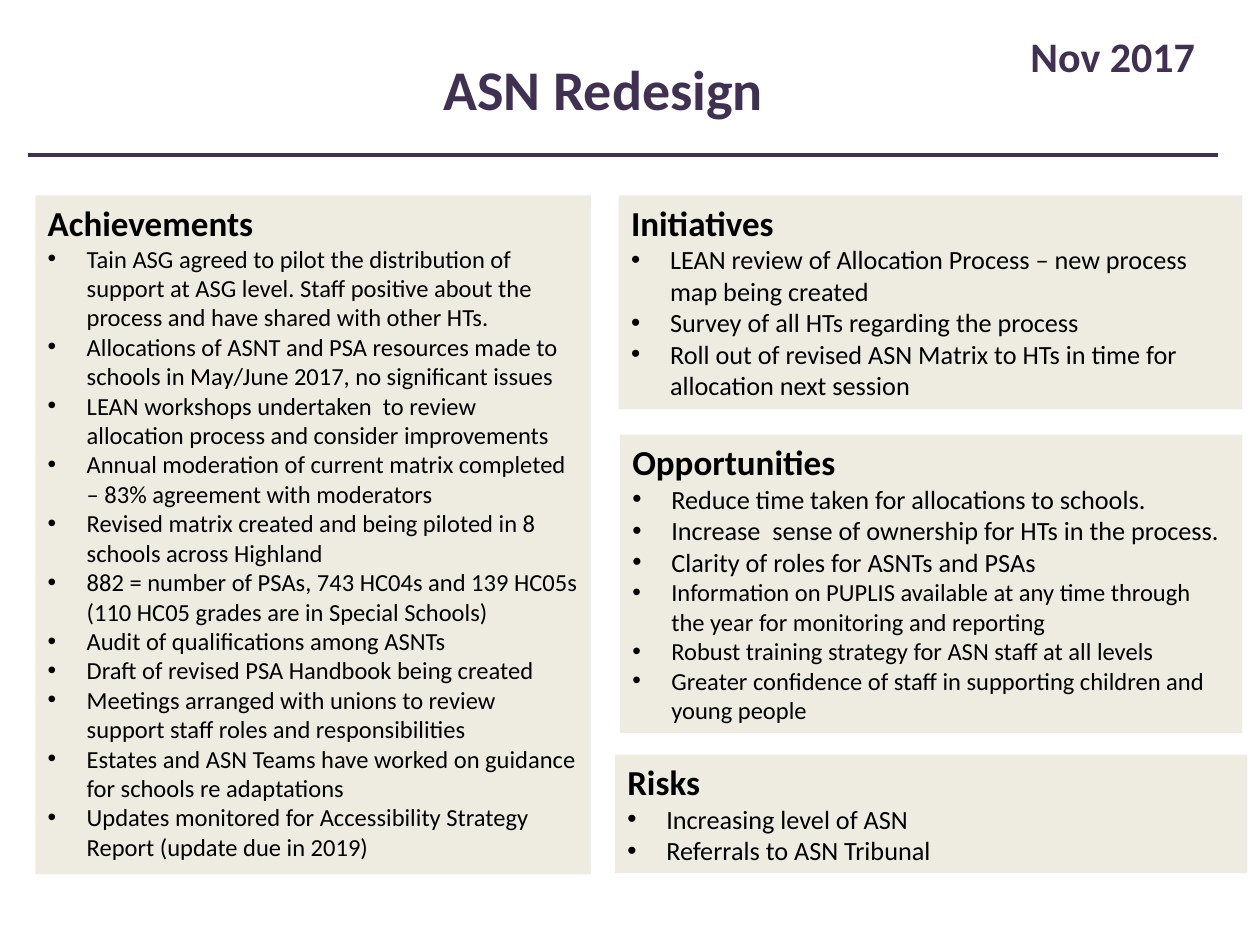
from lxml.etree import SubElement
from pptx import Presentation
from pptx.dml.color import RGBColor
from pptx.enum.shapes import MSO_CONNECTOR, MSO_SHAPE
from pptx.enum.text import MSO_ANCHOR, MSO_AUTO_SIZE, PP_ALIGN
from pptx.oxml.ns import qn
from pptx.util import Inches, Pt

PURPLE = RGBColor(0x40, 0x31, 0x52)
CREAM = RGBColor(0xEE, 0xEC, 0xE1)
BLACK = RGBColor(0, 0, 0)
FONT = "Calibri"

deck = Presentation()
deck.slide_width, deck.slide_height = Inches(10), Inches(7.5)
page = deck.slides.add_slide(deck.slide_layouts[6])

# Grid of 100 columns by 75 rows
COLUMN = deck.slide_width / 100
ROW = deck.slide_height / 75
INDENT = Inches(0.31)


def place(left, top, width, height):
    return (round(left * COLUMN), round(top * ROW),
            round(width * COLUMN), round(height * ROW))


def style(para, size, color, bold=False):
    para.font.name = FONT
    para.font.size = Pt(size)
    para.font.bold = bold
    para.font.color.rgb = color


# Title and date
for text, size, area in [
    ("ASN Redesign", 32, (34.2, 3.8, 28.7, 6.4)),
    ("Nov 2017", 24, (80.8, 1.9, 15.2, 5)),
]:
    box = page.shapes.add_textbox(*place(*area))
    box.text_frame.word_wrap = False
    box.text_frame.auto_size = MSO_AUTO_SIZE.SHAPE_TO_FIT_TEXT
    para = box.text_frame.paragraphs[0]
    para.text = text
    style(para, size, PURPLE, bold=True)

# Rule under the title
left, top, width, _ = place(2.2, 12.3, 94.5, 0)
rule = page.shapes.add_connector(MSO_CONNECTOR.STRAIGHT, left, top, left + width, top)
rule.line.color.rgb = PURPLE
rule.line.width = Pt(2.5)
SubElement(rule._element.spPr, qn("a:effectLst"))

# Panels: heading, area, bullets grouped by text size
panels = [
    ("Achievements", (2.8, 15.5, 44.1, 53.9), [
        (14, [
            "Tain ASG agreed to pilot the distribution of support at ASG level. "
            "Staff positive about the process and have shared with other HTs.",
            "Allocations of ASNT and PSA resources made to schools in May/June 2017, "
            "no significant issues",
            "LEAN workshops undertaken  to review allocation process and consider improvements",
            "Annual moderation of current matrix completed – 83% agreement with moderators",
            "Revised matrix created and being piloted in 8 schools across Highland",
            "882 = number of PSAs, 743 HC04s and 139 HC05s "
            "(110 HC05 grades are in Special Schools)",
            "Audit of qualifications among ASNTs",
            "Draft of revised PSA Handbook being created",
            "Meetings arranged with unions to review support staff roles and responsibilities",
            "Estates and ASN Teams have worked on guidance for schools re adaptations",
            "Updates monitored for Accessibility Strategy Report (update due in 2019)",
        ]),
    ]),
    ("Initiatives", (49.1, 15.5, 49.5, 17), [
        (15, [
            "LEAN review of Allocation Process – new process map being created",
            "Survey of all HTs regarding the process",
            "Roll out of revised ASN Matrix to HTs in time for allocation next session",
        ]),
    ]),
    ("Opportunities", (49.2, 34.5, 49.4, 23.7), [
        (15, [
            "Reduce time taken for allocations to schools.",
            "Increase  sense of ownership for HTs in the process.",
            "Clarity of roles for ASNTs and PSAs",
        ]),
        (14, [
            "Information on PUPLIS available at any time through the year "
            "for monitoring and reporting",
            "Robust training strategy for ASN staff at all levels",
            "Greater confidence of staff in supporting children and young people",
        ]),
    ]),
    ("Risks", (48.8, 59.9, 50.2, 9.4), [
        (15, ["Increasing level of ASN", "Referrals to ASN Tribunal"]),
    ]),
]

for heading, area, groups in panels:
    panel = page.shapes.add_shape(MSO_SHAPE.RECTANGLE, *place(*area))
    panel.shadow.inherit = False
    panel.fill.solid()
    panel.fill.fore_color.rgb = CREAM
    panel.line.fill.background()
    frame = panel.text_frame
    frame.word_wrap = True
    frame.auto_size = MSO_AUTO_SIZE.SHAPE_TO_FIT_TEXT
    frame.vertical_anchor = MSO_ANCHOR.TOP

    para = frame.paragraphs[0]
    para.text = heading
    para.alignment = PP_ALIGN.LEFT
    style(para, 20, BLACK, bold=True)

    for size, bullets in groups:
        for text in bullets:
            para = frame.add_paragraph()
            para.text = text
            para.alignment = PP_ALIGN.LEFT
            properties = para._p.get_or_add_pPr()
            properties.set("marL", str(INDENT))
            properties.set("indent", str(-INDENT))
            SubElement(properties, qn("a:buFont")).set("typeface", "Arial")
            SubElement(properties, qn("a:buChar")).set("char", "•")
            style(para, size, BLACK)

deck.save("out.pptx")
